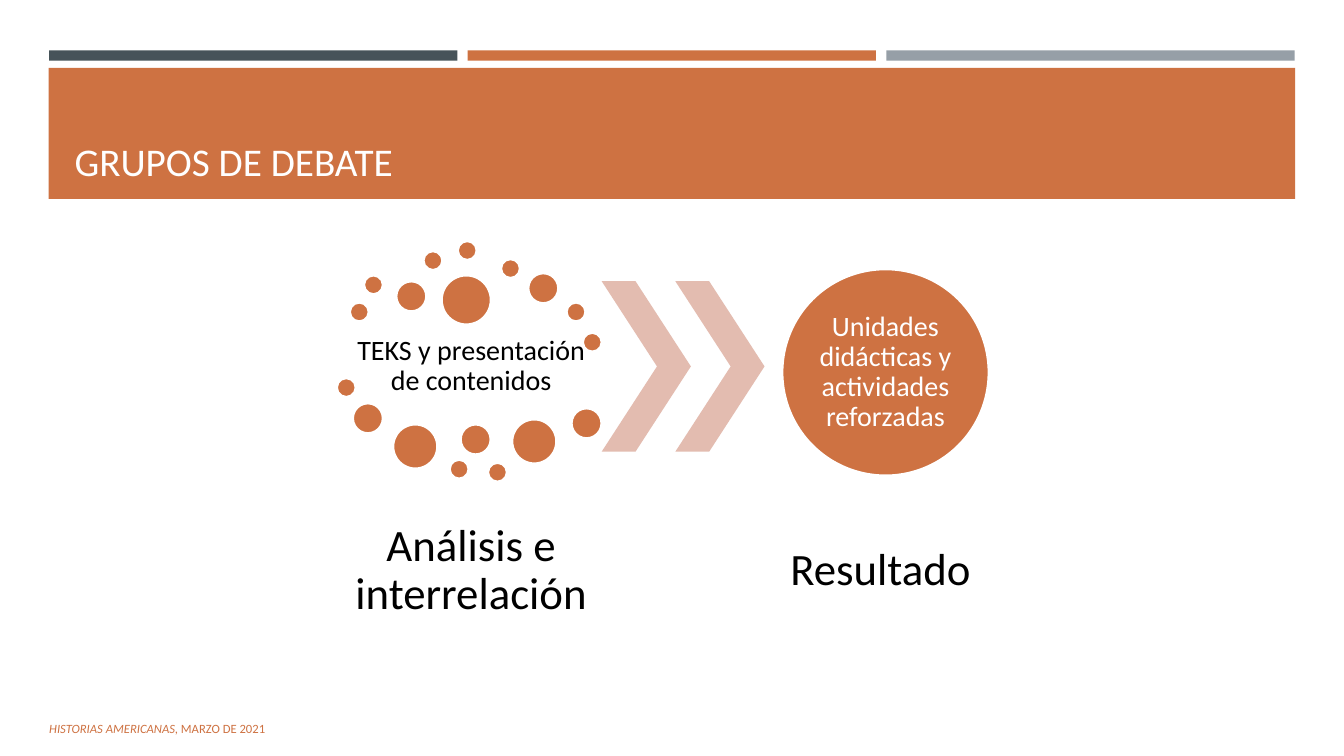
from pptx import Presentation
from pptx.dml.color import RGBColor
from pptx.enum.shapes import MSO_SHAPE
from pptx.enum.text import MSO_ANCHOR, MSO_AUTO_SIZE, PP_ALIGN
from pptx.util import Pt

RECT, OVAL, CHEVRON = MSO_SHAPE.RECTANGLE, MSO_SHAPE.OVAL, MSO_SHAPE.CHEVRON
MIDDLE, BOTTOM = MSO_ANCHOR.MIDDLE, MSO_ANCHOR.BOTTOM
LEFT, CENTER = PP_ALIGN.LEFT, PP_ALIGN.CENTER
NO_FIT = MSO_AUTO_SIZE.NONE

RUST, WHITE, BLACK, PINK = "CE7242", "FFFFFF", "000000", "E3BCB0"
BARS = ["465359", RUST, "969FA7"]
TITLE = "GRUPOS DE DEBATE"
FOOTER = [("HISTORIAS AMERICANAS", True), (", MARZO DE 2021", False)]
LABELS = [
    ("TEKS y presentación de contenidos", (249.8, 233.3, 173.5, 56.9), 20, BLACK, 2),
    ("Análisis e interrelación", (249.8, 354.2, 173.5, 107.3), 32, BLACK, 2.9),
    ("Unidades didácticas y actividades reforzadas", (580.3, 213.8, 104.4, 104.4), 20, WHITE, 0),
    ("Resultado ", (545.8, 354.2, 173.5, 107.3), 32, BLACK, 2.9),
]
DOTS = {
    13.7: [(249.8, 216), (259.9, 196.6), (302.4, 179.3), (326.9, 172.1),
           (357.8, 185), (404.6, 216), (416.2, 237.6), (240.5, 270),
           (321.1, 328.3), (348.5, 330.5)],
    21.6: [(283, 200.9), (377.3, 195.1), (252, 288), (329, 303.1), (408.2, 291.6)],
    31.7: [(280.8, 303.1), (365.8, 299.5)],
    35.3: [(315.4, 196.6)],
    147.6: [(558.7, 192.2)],
}

deck = Presentation()
deck.slide_width, deck.slide_height = Pt(960), Pt(540)
slide = deck.slides.add_slide(deck.slide_layouts[5])
shapes = slide.shapes


def color(code):
    return RGBColor.from_string(code)


def draw(kind, box, fill, edge=None):
    shape = shapes.add_shape(kind, *map(Pt, box))
    shape.shadow.inherit = False
    shape.fill.solid()
    shape.fill.fore_color.rgb = color(fill)
    if edge:
        shape.line.color.rgb = color(edge)
        shape.line.width = Pt(1.75)
    else:
        shape.line.fill.background()
    return shape


def write(shape, runs, size, tint, align=LEFT, anchor=MIDDLE, inset=None, space=1):
    frame = shape.text_frame
    look = {"word_wrap": True, "auto_size": NO_FIT, "vertical_anchor": anchor}
    if inset is not None:
        for side in ("left", "top", "right", "bottom"):
            look["margin_" + side] = Pt(inset)
    for name, value in look.items():
        setattr(frame, name, value)
    para = frame.paragraphs[0]
    para.alignment, para.line_spacing = align, space
    for text, slant in runs:
        run = para.add_run()
        run.text = text
        style = {"name": "Calibri", "size": Pt(size), "italic": slant}
        for name, value in style.items():
            setattr(run.font, name, value)
        run.font.color.rgb = color(tint)


for i, fill in enumerate(BARS):
    draw(RECT, (35.1 + i * 299, 36, 291.6, 7.4), fill)
band = draw(RECT, (34.8, 48.5, 890.4, 93.6), RUST)

title = shapes.title
place = {"left": 46.1, "top": 55.4, "width": 868.3, "height": 79.9}
for name, value in place.items():
    setattr(title, name, Pt(value))
write(title, [(TITLE, False)], 28, WHITE, anchor=BOTTOM)
band.element.addnext(title.element)

foot = shapes.add_textbox(*map(Pt, (28.1, 506.2, 537.1, 28.8)))
write(foot, FOOTER, 9, RUST)

for size, spots in DOTS.items():
    for x, y in spots:
        draw(OVAL, (x, y, size, size), RUST, WHITE)

for x in (429.8, 482.4):
    arrow = draw(CHEVRON, (x, 200.9, 63.7, 121.7), PINK)
    arrow.adjustments[0] = 0.62

for text, box, size, tint, inset in LABELS:
    label = shapes.add_textbox(*map(Pt, box))
    write(label, [(text, False)], size, tint, CENTER, MIDDLE, inset, 0.9)

deck.save("out.pptx")
